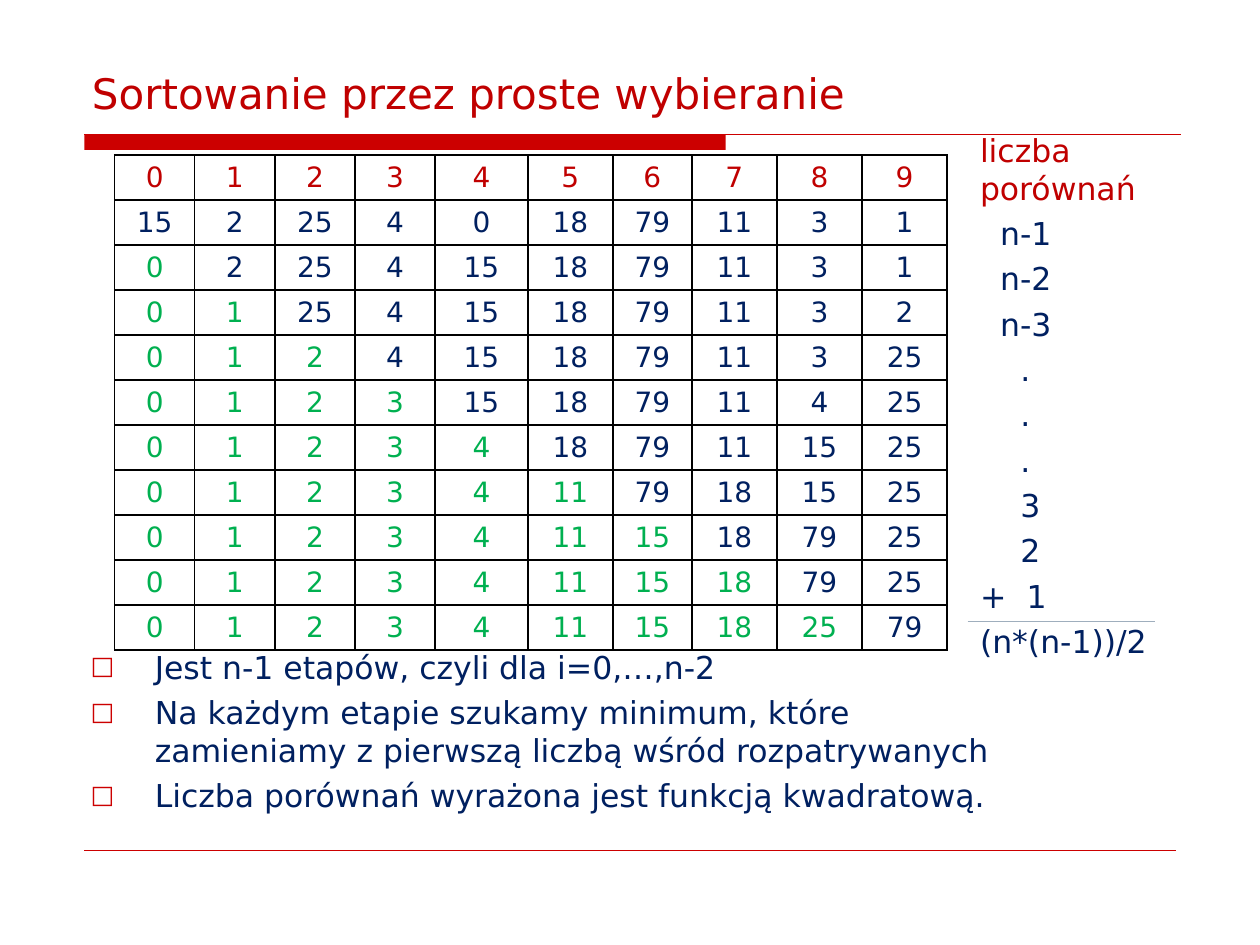
"""Builds the slide on selection sort, with its trace table and comparison count."""
from lxml import etree
from pptx import Presentation
from pptx.dml.color import RGBColor
from pptx.enum.shapes import MSO_CONNECTOR, MSO_SHAPE
from pptx.enum.text import MSO_ANCHOR, MSO_AUTO_SIZE, PP_ALIGN
from pptx.oxml import parse_xml
from pptx.oxml.ns import nsdecls, qn
from pptx.util import Inches, Pt

STRAIGHT = MSO_CONNECTOR.STRAIGHT
RECTANGLE = MSO_SHAPE.RECTANGLE
BOTTOM, MIDDLE = MSO_ANCHOR.BOTTOM, MSO_ANCHOR.MIDDLE
NO_AUTOFIT = MSO_AUTO_SIZE.NONE
LEFT, CENTER = PP_ALIGN.LEFT, PP_ALIGN.CENTER

COLORS = {"heading": "C00000", "accent": "CC0000", "text": "002060",
          "sorted": "00B050", "sum": "9FAEBD", "border": "000000"}
FONT = "DejaVu Sans"
SPACE_BEFORE = Pt(4.3)
NUMBERS = [15, 2, 25, 4, 0, 18, 79, 11, 3, 1]
TABLE_WIDTH, TABLE_HEIGHT = 6.61, 3.93
COLUMN_SHARES = [0.64, 0.64, 0.64, 0.64, 0.74, 0.68, 0.63, 0.68, 0.68, 0.68]
CELL_FORMAT = {"margin_top": Inches(0.03), "margin_bottom": Inches(0.03), "vertical_anchor": MIDDLE}
COMPARISONS = [("liczba porównań", 0), ("n-1", 0.16), ("n-2", 0.16), ("n-3", 0.16),
               (".", 0.32), (".", 0.32), (".", 0.32), ("3", 0.32), ("2", 0.32),
               ("+\t1", 0), ("(n*(n-1))/2", 0)]
CONCLUSIONS = ["Jest n-1 etapów, czyli dla i=0,…,n-2",
               "Na każdym etapie szukamy minimum, które zamieniamy z pierwszą liczbą wśród rozpatrywanych",
               "Liczba porównań wyrażona jest funkcją kwadratową."]
LINES = [(0.67, 9.37, 1.07, "accent", 0.75),
         (0.67, 9.33, 6.75, "accent", 0.25),
         (7.68, 9.17, 4.93, "sum", 0.75)]


def write(paragraph, text, size, color, alignment=LEFT):
    paragraph.text = text
    paragraph.alignment = alignment
    for name, value in {"name": FONT, "size": Pt(size), "bold": False}.items():
        setattr(paragraph.font, name, value)
    paragraph.font.color.rgb = RGBColor.from_string(COLORS[color])


def add_text_frame(slide, left, top, width, height):
    frame = slide.shapes.add_textbox(*map(Inches, (left, top, width, height))).text_frame
    frame.word_wrap = True
    return frame


presentation = Presentation()
presentation.slide_width, presentation.slide_height = Inches(10), Inches(7.5)
slide = presentation.slides.add_slide(presentation.slide_layouts[5])

title = slide.shapes.title
placement = {"left": 0.63, "top": 0.33, "width": 8.75, "height": 0.66}
for name, value in placement.items():
    setattr(title, name, Inches(value))
for name, value in {"vertical_anchor": BOTTOM, "auto_size": NO_AUTOFIT, "word_wrap": True}.items():
    setattr(title.text_frame, name, value)
write(title.text_frame.paragraphs[0], "Sortowanie przez proste wybieranie", 24, "heading")

bar = slide.shapes.add_shape(RECTANGLE, Inches(0.67), Inches(1.07), Inches(5.09), Inches(0.12))
bar.shadow.inherit = False
bar.fill.solid()
bar.fill.fore_color.rgb = RGBColor.from_string(COLORS["accent"])
bar.line.fill.background()

for start, end, height, color, weight in LINES:
    line = slide.shapes.add_connector(STRAIGHT, Inches(start), Inches(height), Inches(end), Inches(height))
    line.line.color.rgb = RGBColor.from_string(COLORS[color])
    line.line.width = Pt(weight)
    etree.SubElement(line._element.spPr, qn("a:effectLst"))

conclusions = add_text_frame(slide, 0.62, 5.09, 7.81, 1.57)
for index, text in enumerate(CONCLUSIONS):
    paragraph = conclusions.add_paragraph() if index else conclusions.paragraphs[0]
    properties = paragraph._p.get_or_add_pPr()
    properties.set("marL", str(Inches(0.51)))
    properties.set("indent", str(-Inches(0.51)))
    if index:
        paragraph.space_before = SPACE_BEFORE
    bullet_color = etree.SubElement(properties, qn("a:buClr"))
    etree.SubElement(bullet_color, qn("a:srgbClr"), val=COLORS["accent"])
    etree.SubElement(properties, qn("a:buSzPct"), val="80000")
    etree.SubElement(properties, qn("a:buFont"), typeface=FONT)
    etree.SubElement(properties, qn("a:buChar"), char="□")
    write(paragraph, text, 18, "text")

trace = [list(range(len(NUMBERS))), list(NUMBERS)]
for step in range(len(NUMBERS) - 1):
    numbers = list(trace[-1])
    smallest = numbers.index(min(numbers[step:]))
    numbers[step], numbers[smallest] = numbers[smallest], numbers[step]
    trace.append(numbers)

table = slide.shapes.add_table(len(trace), len(NUMBERS), Inches(0.91), Inches(1.23),
                               Inches(TABLE_WIDTH), Inches(TABLE_HEIGHT)).table
table.first_row = table.horz_banding = False
for column, share in zip(table.columns, COLUMN_SHARES):
    column.width = Inches(TABLE_WIDTH * share / sum(COLUMN_SHARES))
for row_index, numbers in enumerate(trace):
    table.rows[row_index].height = Inches(TABLE_HEIGHT / len(trace))
    for column_index, number in enumerate(numbers):
        cell = table.cell(row_index, column_index)
        cell.fill.background()
        for name, value in CELL_FORMAT.items():
            setattr(cell, name, value)
        color = "sorted" if column_index < row_index - 1 else "text"
        write(cell.text_frame.paragraphs[0], str(number), 16, color if row_index else "heading", CENTER)
        for position, side in enumerate(("lnL", "lnR", "lnT", "lnB")):
            border = parse_xml(f'<a:{side} {nsdecls("a")} w="{Pt(1)}"><a:solidFill>'
                               f'<a:srgbClr val="{COLORS["border"]}"/></a:solidFill></a:{side}>')
            cell._tc.get_or_add_tcPr().insert(position, border)

comparisons = add_text_frame(slide, 7.68, 0.99, 1.86, 4.41)
for index, (text, indent) in enumerate(COMPARISONS):
    paragraph = comparisons.add_paragraph() if index else comparisons.paragraphs[0]
    properties = paragraph._p.get_or_add_pPr()
    properties.set("marL", str(Inches(indent)))
    if index:
        paragraph.space_before = SPACE_BEFORE
    if "\t" in text:
        tabs = etree.SubElement(properties, qn("a:tabLst"))
        etree.SubElement(tabs, qn("a:tab"), pos=str(Inches(0.37)), algn="l")
    write(paragraph, text, 18, "text" if index else "heading")

presentation.save("out.pptx")
